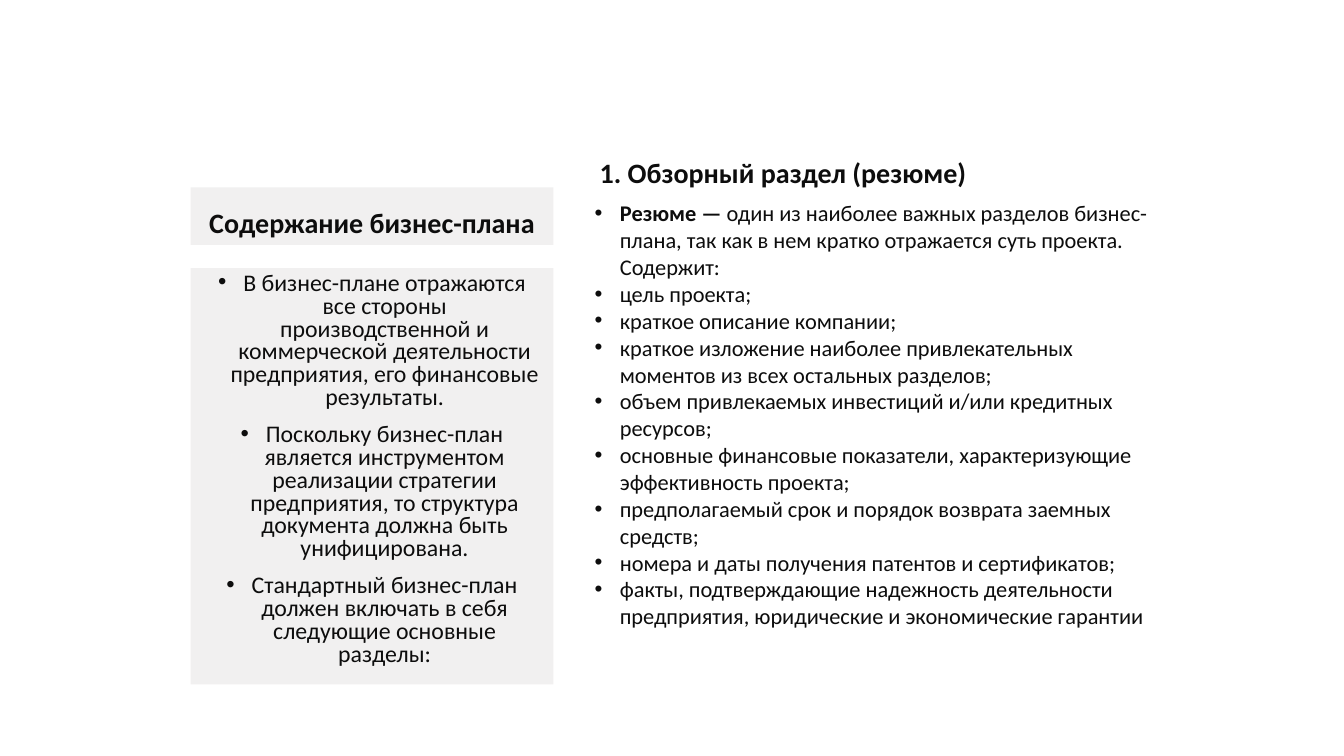
from dataclasses import dataclass
from typing import Optional

from lxml import etree
from pptx import Presentation
from pptx import util as u
from pptx.dml.color import RGBColor
from pptx.enum import shapes, text
from pptx.oxml import ns

FONT = "Calibri"
COLORS = {"ink": "0D0D0D", "panel": "F1F0F0"}
INDENT = u.Inches(0.25)


@dataclass
class Block:
    left: float
    top: float
    width: float
    height: float
    lines: list[str]
    size: float
    bold: bool = False
    lead: str = ""
    fill: Optional[str] = None
    center: bool = False
    bottom: bool = False
    bullet: bool = False
    pitch: float = 1.0
    before: float = 0


# Wording
PLAN = [
    "В бизнес-плане отражаются все стороны производственной и коммерческой "
    "деятельности предприятия, его финансовые результаты.",
    "Поскольку бизнес-план является инструментом реализации стратегии "
    "предприятия, то структура документа должна быть унифицирована.",
    "Стандартный бизнес-план должен включать в себя следующие основные разделы:",
]
REVIEW = [
    "один из наиболее важных разделов бизнес-плана, так как в нем кратко "
    "отражается суть проекта. Содержит:",
    "цель проекта;",
    "краткое описание компании;",
    "краткое изложение наиболее привлекательных моментов из всех остальных разделов;",
    "объем привлекаемых инвестиций и/или кредитных ресурсов;",
    "основные финансовые показатели, характеризующие эффективность проекта;",
    "предполагаемый срок и порядок возврата заемных средств;",
    "номера и даты получения патентов и сертификатов;",
    "факты, подтверждающие надежность деятельности предприятия, "
    "юридические и экономические гарантии",
]

# Left panels, then the right column
BLOCKS = [
    Block(1.89, 1.86, 3.6, 0.57, ["Содержание бизнес-плана"], 20, bold=True,
          fill="panel", center=True, bottom=True, pitch=0.9, before=10),
    Block(1.89, 2.66, 3.6, 4.13, PLAN, 17, fill="panel", center=True,
          bullet=True, pitch=0.8, before=10),
    Block(5.85, 1.03, 5.1, 0.9, ["1. Обзорный раздел (резюме)"], 20, bold=True,
          bottom=True, pitch=0.9, before=10),
    Block(5.8, 1.93, 5.73, 4.03, REVIEW, 16, lead="Резюме — ", bullet=True),
]


def add_run(para, words: str, *, size: float, bold: bool = False) -> None:
    run = para.add_run()
    run.text = words
    run.font.name = FONT
    run.font.size = u.Pt(size)
    run.font.bold = bold
    run.font.color.rgb = RGBColor.from_string(COLORS["ink"])


def add_bullet(para) -> None:
    props = para._p.get_or_add_pPr()
    props.set("marL", str(INDENT))
    props.set("indent", str(-INDENT))
    etree.SubElement(props, ns.qn("a:buFont"), typeface="Arial")
    etree.SubElement(props, ns.qn("a:buChar"), char="•")


def draw_block(slide, block: Block) -> None:
    area = [u.Inches(n) for n in (block.left, block.top, block.width, block.height)]
    if block.fill:
        box = slide.shapes.add_shape(shapes.MSO_SHAPE.RECTANGLE, *area)
        box.shadow.inherit = False
        box.fill.solid()
        box.fill.fore_color.rgb = RGBColor.from_string(COLORS[block.fill])
        box.line.fill.background()
    else:
        box = slide.shapes.add_textbox(*area)
    frame = box.text_frame
    frame.word_wrap = True
    anchor = text.MSO_ANCHOR
    frame.vertical_anchor = anchor.BOTTOM if block.bottom else anchor.TOP

    for i, words in enumerate(block.lines):
        para = frame.add_paragraph() if i else frame.paragraphs[0]
        para.alignment = text.PP_ALIGN.CENTER if block.center else text.PP_ALIGN.LEFT
        para.line_spacing = block.pitch
        para.space_before = u.Pt(block.before)
        if block.bullet:
            add_bullet(para)
        if block.lead and i == 0:
            add_run(para, block.lead, size=block.size, bold=True)
        add_run(para, words, size=block.size, bold=block.bold)


def main() -> None:
    deck = Presentation()
    deck.slide_width = u.Inches(13.33)
    deck.slide_height = u.Inches(7.5)
    slide = deck.slides.add_slide(deck.slide_layouts[6])
    for block in BLOCKS:
        draw_block(slide, block)
    deck.save("out.pptx")


if __name__ == "__main__":
    main()
